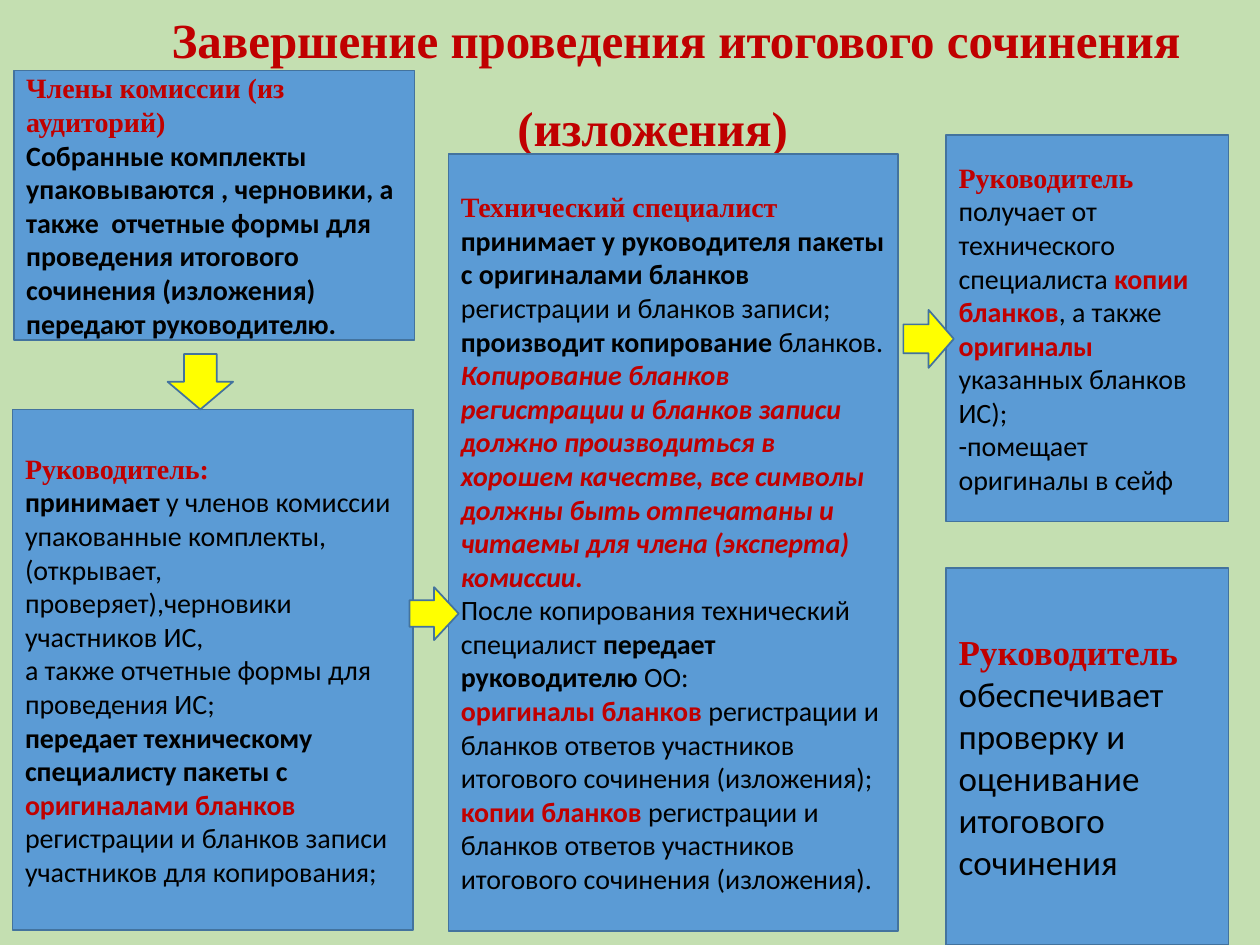
import pptx
import pptx.dml.color
import pptx.enum.shapes
import pptx.enum.text
import pptx.util
from pptx.util import Inches

COLORS = {
    "background": "C4DFB1",
    "box": "5B9BD5",
    "outline": "43739E",
    "arrow": "FFFF00",
    "accent": "C00000",
    "text": "000000",
}

# Style name: font, colour, bold, italic
STYLES = {
    "heading": ("Times New Roman", "accent", True, False),
    "plain": ("Calibri", "text", False, False),
    "bold": ("Calibri", "text", True, False),
    "red": ("Calibri", "accent", True, False),
    "red italic": ("Calibri", "accent", True, True),
}

# Each box: position, text size, paragraphs made of (style, text) runs
BOXES = [
    ((0.11, 0.56, 3.18, 2.14), 16, [
        [("heading", "Члены комиссии (из аудиторий)")],
        [("bold", "Собранные комплекты упаковываются , черновики, а также  отчетные формы "
                  "для проведения итогового сочинения (изложения)  передают руководителю.")],
    ]),
    ((0.1, 3.25, 3.18, 4.13), 16, [
        [("heading", "Руководитель:")],
        [("bold", "принимает"),
         ("plain", " у членов комиссии упакованные комплекты, (открывает, "
                   "проверяет),черновики участников ИС,")],
        [("plain", "а также отчетные формы для проведения ИС;")],
        [("bold", "передает техническому специалисту пакеты с "),
         ("red", "оригиналами бланков "),
         ("plain", "регистрации и бланков записи участников для копирования;")],
    ]),
    ((3.56, 1.22, 3.57, 6.17), 16, [
        [("heading", "Технический специалист")],
        [("bold", "принимает у руководителя пакеты с оригиналами бланков"),
         ("plain", " регистрации и бланков записи;")],
        [("bold", "производит копирование "),
         ("plain", "бланков. "),
         ("red italic", "Копирование бланков регистрации и бланков записи должно "
                        "производиться в хорошем качестве, все символы должны быть "
                        "отпечатаны и читаемы для члена (эксперта) комиссии.")],
        [("plain", "После копирования технический специалист "),
         ("bold", "передает руководителю "),
         ("plain", "ОО:")],
        [("red", "оригиналы бланков "),
         ("plain", "регистрации и бланков ответов участников итогового сочинения (изложения);")],
        [("red", "копии бланков "),
         ("plain", "регистрации и бланков ответов участников итогового сочинения (изложения).")],
    ]),
    ((7.51, 1.07, 2.24, 3.07), 16, [
        [("heading", "Руководитель")],
        [("plain", "получает от технического специалиста "),
         ("red", "копии бланков"),
         ("plain", ", а также "),
         ("red", "оригиналы "),
         ("plain", "указанных бланков ИС);")],
        [("plain", "-помещает оригиналы в сейф")],
    ]),
    ((7.51, 4.51, 2.24, 2.99), 20, [
        [("heading", "Руководитель")],
        [("plain", "обеспечивает проверку и оценивание итогового сочинения")],
    ]),
]

ARROWS = [
    ("DOWN_ARROW", (1.33, 2.81, 0.52, 0.44)),
    ("RIGHT_ARROW", (3.25, 4.66, 0.39, 0.42)),
    ("RIGHT_ARROW", (7.17, 2.46, 0.4, 0.46)),
]


def color(name):
    return pptx.dml.color.RGBColor.from_string(COLORS[name])


def add_run(paragraph, text, style, size):
    run = paragraph.add_run()
    run.text = text
    font = run.font
    font.name, color_name, font.bold, font.italic = STYLES[style]
    font.size = pptx.util.Pt(size)
    font.color.rgb = color(color_name)


def add_filled_shape(slide, kind, position, fill):
    shape_type = getattr(pptx.enum.shapes.MSO_SHAPE, kind)
    shape = slide.shapes.add_shape(shape_type, *map(Inches, position))
    shape.shadow.inherit = False
    shape.fill.solid()
    shape.fill.fore_color.rgb = color(fill)
    shape.line.color.rgb = color("outline")
    shape.line.width = pptx.util.Pt(1)
    return shape


def add_box(slide, position, size, paragraphs):
    frame = add_filled_shape(slide, "RECTANGLE", position, "box").text_frame
    frame.word_wrap = True
    frame.vertical_anchor = pptx.enum.text.MSO_ANCHOR.MIDDLE
    for index, runs in enumerate(paragraphs):
        paragraph = frame.add_paragraph() if index else frame.paragraphs[0]
        paragraph.alignment = pptx.enum.text.PP_ALIGN.LEFT
        for style, text in runs:
            add_run(paragraph, text, style, size)


def add_title(slide, text):
    position = (0.36, -0.21, 9.64, 1.43)
    frame = slide.shapes.add_textbox(*map(Inches, position)).text_frame
    frame.word_wrap = True
    frame.auto_size = pptx.enum.text.MSO_AUTO_SIZE.SHAPE_TO_FIT_TEXT
    paragraph = frame.paragraphs[0]
    paragraph.alignment = pptx.enum.text.PP_ALIGN.CENTER
    paragraph.line_spacing = 1.5
    # First-line indent
    paragraph._p.get_or_add_pPr().set("indent", str(Inches(0.37)))
    add_run(paragraph, text, "heading", 28)


def main():
    presentation = pptx.Presentation()
    presentation.slide_width = Inches(10)
    presentation.slide_height = Inches(7.5)
    slide = presentation.slides.add_slide(presentation.slide_layouts[6])
    slide.background.fill.solid()
    slide.background.fill.fore_color.rgb = color("background")

    # Title, then the steps, then the arrows that lie over them
    add_title(slide, "Завершение проведения итогового сочинения (изложения)")
    for position, size, paragraphs in BOXES:
        add_box(slide, position, size, paragraphs)
    for kind, position in ARROWS:
        add_filled_shape(slide, kind, position, "arrow")

    presentation.save("out.pptx")


if __name__ == "__main__":
    main()
